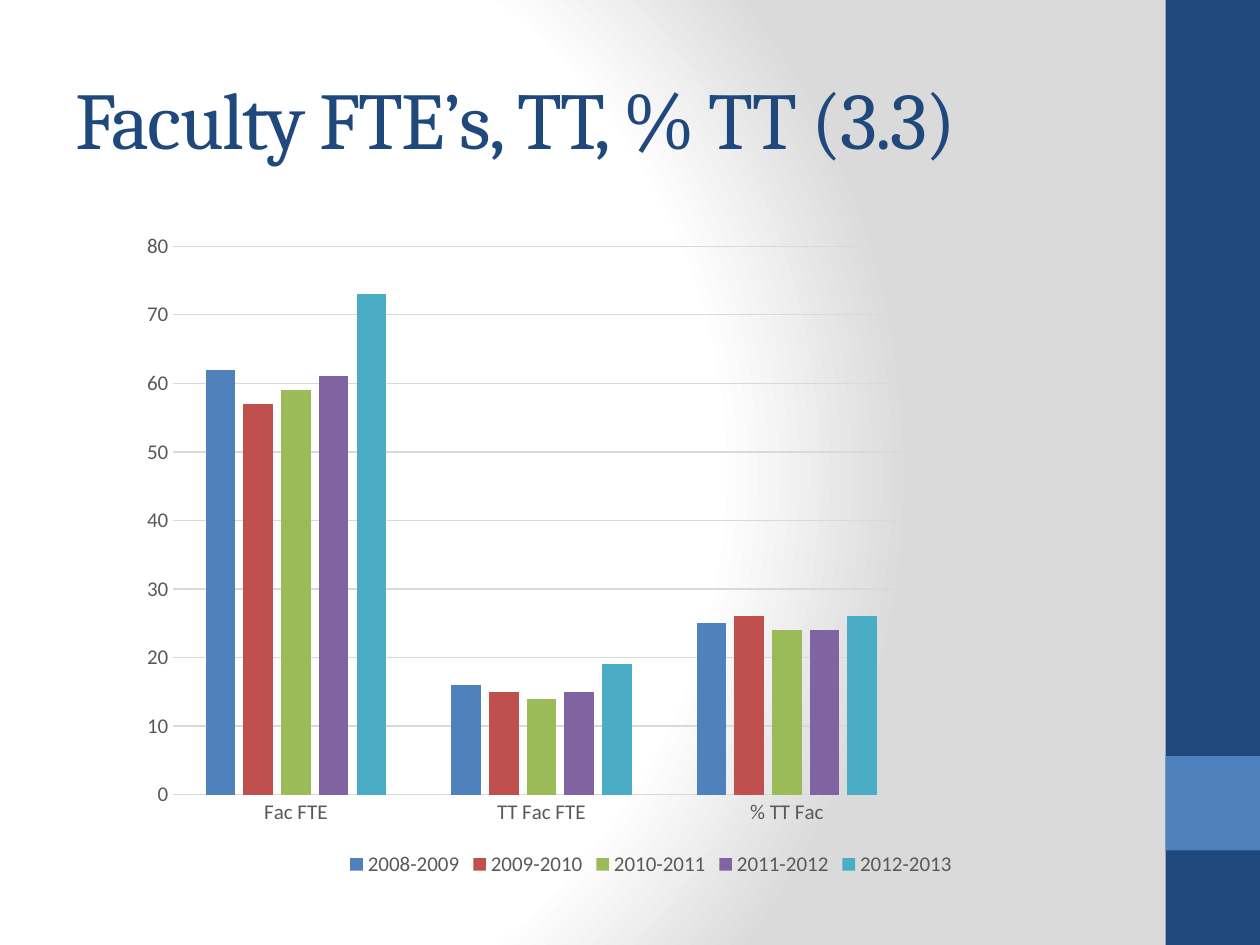
from dataclasses import dataclass

from lxml import etree
from pptx import Presentation
from pptx import util as u
from pptx.chart.data import CategoryChartData
from pptx.dml.color import RGBColor
from pptx.enum import chart as charts, shapes, text
from pptx.oxml import parse_xml
from pptx.oxml.ns import nsdecls, qn

EMU_PER_PX = 9525  # 96 px to the inch
NAVY, BLUE, GRID, LABEL = "1F497D", "4F81BD", "D9D9D9", "595959"


@dataclass(frozen=True)
class Box:
    left: int
    top: int
    width: int
    height: int

    def emu(self) -> list[u.Emu]:
        return [px(n) for n in (self.left, self.top, self.width, self.height)]


@dataclass(frozen=True)
class Band:
    box: Box
    color: str


@dataclass(frozen=True)
class Year:
    name: str
    values: tuple
    color: str


BANDS = [
    Band(Box(888, 0, 72, 720), NAVY),
    Band(Box(888, 576, 72, 72), BLUE),
]
# The last category is left empty.
CATEGORIES = ["Fac FTE", "TT Fac FTE", "% TT Fac", ""]
YEARS = [
    Year("2008-2009", (62, 16, 25, None), BLUE),
    Year("2009-2010", (57, 15, 26, None), "C0504D"),
    Year("2010-2011", (59, 14, 24, None), "9BBB59"),
    Year("2011-2012", (61, 15, 24, None), "8064A2"),
    Year("2012-2013", (73, 19, 26, None), "4BACC6"),
]


def px(n: int) -> u.Emu:
    return u.Emu(n * EMU_PER_PX)


def rgb(color: str) -> RGBColor:
    return RGBColor.from_string(color)


def style_font(font, name: str, size: int, color: str) -> None:
    font.name, font.size = name, u.Pt(size)
    font.color.rgb = rgb(color)


def style_line(line, color: str) -> None:
    line.color.rgb = rgb(color)
    line.width = u.Pt(0.75)


def paint_background(slide) -> None:
    """Fill the slide with a circular gradient, white to grey."""
    slide.background.fill.solid()
    solid = next(slide.element.iter(qn("a:solidFill")))
    gradient = parse_xml(f'<a:gradFill {nsdecls("a")} rotWithShape="1"/>')
    stops = etree.SubElement(gradient, qn("a:gsLst"))
    for percent, color in [(0, "FFFFFF"), (75, "FFFFFF"), (100, "DADADA")]:
        stop = etree.SubElement(stops, qn("a:gs"), pos=str(percent * 1000))
        etree.SubElement(stop, qn("a:srgbClr"), val=color)
    circle = etree.SubElement(gradient, qn("a:path"), path="circle")
    etree.SubElement(circle, qn("a:fillToRect"),
                     l="20000", t="50000", r="100000", b="50000")
    solid.getparent().replace(solid, gradient)


def add_band(slide, band: Band) -> None:
    bar = slide.shapes.add_shape(shapes.MSO_SHAPE.RECTANGLE, *band.box.emu())
    bar.shadow.inherit = False
    bar.fill.solid()
    bar.fill.fore_color.rgb = rgb(band.color)
    bar.line.fill.background()


def add_title(slide, wording: str, box: Box) -> None:
    frame = slide.shapes.add_textbox(*box.emu()).text_frame
    frame.word_wrap = True
    frame.vertical_anchor = text.MSO_ANCHOR.MIDDLE
    heading = frame.paragraphs[0]
    run = heading.add_run()
    run.text = wording
    style_font(heading.font, "Cambria", 46, NAVY)
    run.font._element.set("spc", "-100")  # letter spacing, 1/100 pt


def add_faculty_chart(slide, years: list[Year], box: Box) -> None:
    data = CategoryChartData()
    data.categories = CATEGORIES
    for year in years:
        data.add_series(year.name, year.values)
    chart = slide.shapes.add_chart(
        charts.XL_CHART_TYPE.COLUMN_CLUSTERED, *box.emu(), data).chart
    chart.has_title = False
    style_font(chart.font, "Calibri", 10, "000000")

    chart.has_legend = True
    chart.legend.position = charts.XL_LEGEND_POSITION.BOTTOM
    chart.legend.include_in_layout = False
    style_font(chart.legend.font, "Calibri", 12, LABEL)

    for axis in (chart.category_axis, chart.value_axis):
        axis.major_tick_mark = axis.minor_tick_mark = charts.XL_TICK_MARK.NONE
        style_font(axis.tick_labels.font, "Calibri", 12, LABEL)
    style_line(chart.category_axis.format.line, GRID)
    chart.value_axis.format.line.fill.background()
    style_line(chart.value_axis.major_gridlines.format.line, GRID)

    plot = chart.plots[0]
    plot.gap_width, plot.overlap = 219, -27
    plot.vary_by_categories = False
    for columns, year in zip(plot.series, years):
        columns.format.fill.solid()
        columns.format.fill.fore_color.rgb = rgb(year.color)


def main() -> None:
    deck = Presentation()
    deck.slide_width, deck.slide_height = px(960), px(720)
    slide = deck.slides.add_slide(deck.slide_layouts[6])
    paint_background(slide)
    for band in BANDS:
        add_band(slide, band)
    add_title(slide, "Faculty FTE’s, TT, % TT (3.3)", Box(48, 29, 800, 120))
    add_faculty_chart(slide, YEARS, Box(96, 168, 800, 504))
    deck.save("out.pptx")


if __name__ == "__main__":
    main()
